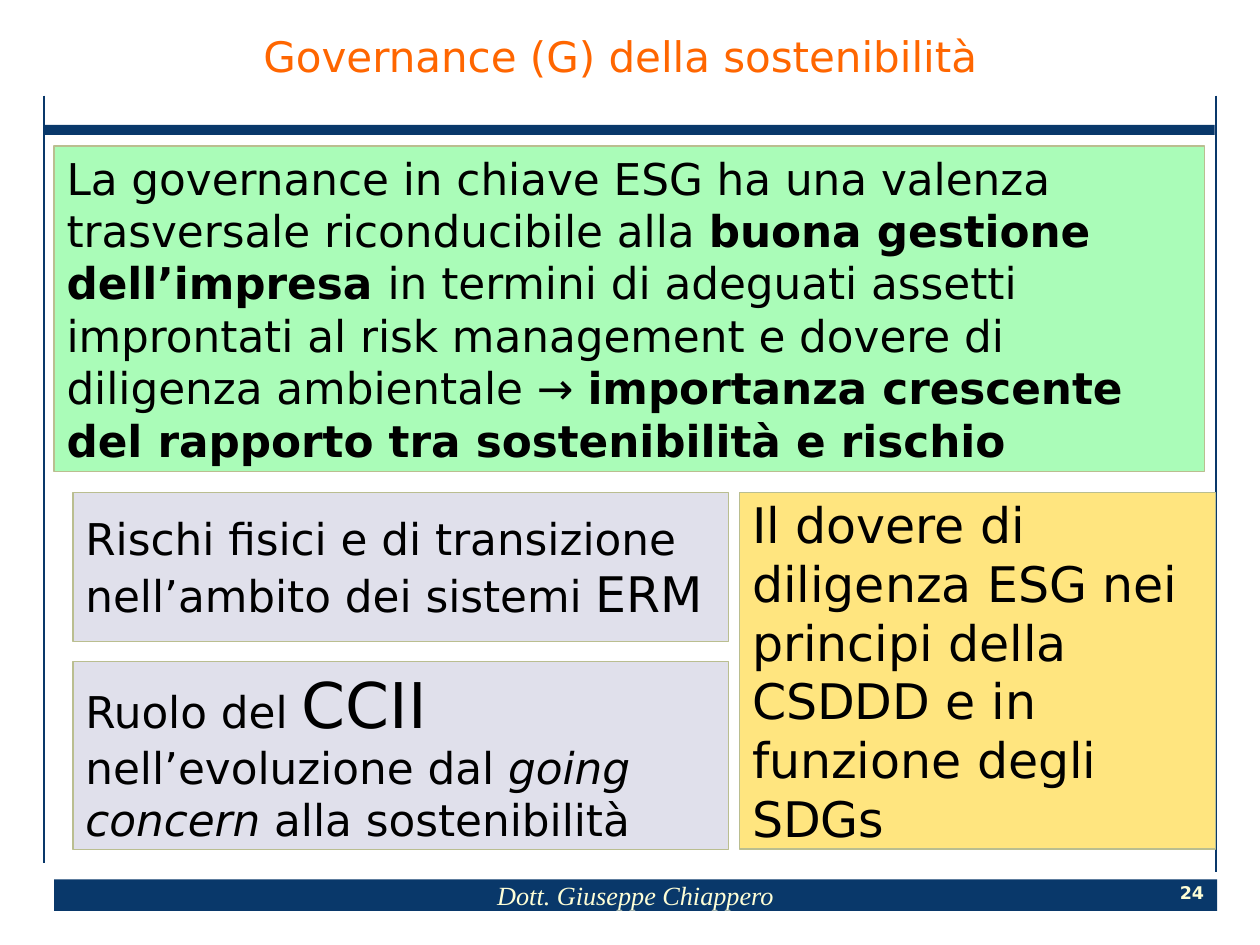
from dataclasses import dataclass

from lxml.etree import SubElement
from pptx import Presentation
from pptx.dml.color import RGBColor
from pptx.enum.shapes import MSO_CONNECTOR, MSO_SHAPE
from pptx.enum.text import MSO_ANCHOR, PP_ALIGN
from pptx.oxml.ns import qn
from pptx.util import Inches, Pt

COLORS = {
    "navy": "09386A", "cream": "FEFED6", "orange": "FF6600", "black": "000000",
    "green": "AAFCB8", "yellow": "FFE57F", "lilac": "E0E0EB", "edge": "BABE90",
}
BODY_FONT = "DejaVu Sans"
FOOTER_FONT = "Times New Roman"


@dataclass
class Span:
    text: str
    size: float = 25
    bold: bool = False
    italic: bool = False


@dataclass
class Panel:
    left: float
    top: float
    width: float
    height: float
    fill: str
    spans: list[Span]


LEFT_COLUMN = {"left": 0.58, "width": 5.2, "fill": "lilac"}
PANELS = [
    Panel(0.43, 1.16, 9.13, 2.58, "green", [
        Span("La governance in chiave ESG ha una valenza trasversale riconducibile alla "),
        Span("buona gestione dell’impresa ", bold=True),
        Span("in termini di adeguati assetti improntati al risk management "
             "e dovere di diligenza ambientale → "),
        Span("importanza crescente del rapporto tra sostenibilità e rischio", bold=True),
    ]),
    Panel(5.87, 3.91, 3.78, 2.83, "yellow", [
        Span("Il dovere di diligenza ESG nei principi della CSDDD "
             "e in funzione degli SDGs", 28),
    ]),
    Panel(top=3.91, height=1.18, **LEFT_COLUMN, spans=[
        Span("Rischi fisici e di transizione nell’ambito dei sistemi "),
        Span("ERM", 28),
    ]),
    Panel(top=5.25, height=1.49, **LEFT_COLUMN, spans=[
        Span("Ruolo del "),
        Span("CCII ", 36),
        Span("nell’evoluzione dal "),
        Span("going concern", italic=True),
        Span(" alla sostenibilità"),
    ]),
]


def color(name: str) -> RGBColor:
    return RGBColor.from_string(COLORS[name])


def write(shape, spans: list[Span], *, ink: str = "black", font: str = BODY_FONT,
          align=PP_ALIGN.LEFT, wrap: bool = True, margin: float = 0.1,
          line_spacing: float = 1.0) -> None:
    """Fill a shape with one vertically centred paragraph."""
    frame = shape.text_frame
    frame.word_wrap = wrap
    frame.vertical_anchor = MSO_ANCHOR.MIDDLE
    frame.margin_left = frame.margin_right = Inches(margin)
    frame.margin_top = frame.margin_bottom = Inches(margin / 2)
    para = frame.paragraphs[0]
    para.alignment = align
    para.line_spacing = line_spacing
    para.space_before = Pt(0)
    for span in spans:
        run = para.add_run()
        run.text = span.text
        run.font.name = font
        run.font.size = Pt(span.size)
        run.font.bold = span.bold
        run.font.italic = span.italic
        run.font.color.rgb = color(ink)


def add_box(page, left: float, top: float, width: float, height: float,
            fill: str, edge: str | None = None):
    box = page.shapes.add_shape(MSO_SHAPE.RECTANGLE, Inches(left), Inches(top),
                                Inches(width), Inches(height))
    box.shadow.inherit = False
    box.fill.solid()
    box.fill.fore_color.rgb = color(fill)
    if edge:
        box.line.color.rgb = color(edge)
        box.line.width = Pt(0.75)
    else:
        box.line.fill.background()
    return box


def add_side_line(page, x: float, top: float, bottom: float) -> None:
    line = page.shapes.add_connector(MSO_CONNECTOR.STRAIGHT, Inches(x), Inches(top),
                                     Inches(x), Inches(bottom))
    line.line.color.rgb = color("navy")
    line.line.width = Pt(1)
    SubElement(line._element.spPr, qn("a:effectLst"))


def main() -> None:
    deck = Presentation()
    deck.slide_width, deck.slide_height = Inches(10), Inches(7.5)
    page = deck.slides.add_slide(deck.slide_layouts[5])

    # Frame: top bar, footer bar and side lines
    add_box(page, 0.35, 0.99, 9.29, 0.08, "navy")
    footer = add_box(page, 0.43, 6.98, 9.23, 0.25, "navy")
    write(footer, [Span("Dott. Giuseppe Chiappero", 15, italic=True)], ink="cream",
          font=FOOTER_FONT, align=PP_ALIGN.CENTER)
    add_side_line(page, 0.35, 0.76, 6.85)
    add_side_line(page, 9.65, 0.76, 6.92)

    # Page number
    number = page.shapes.add_textbox(Inches(9.33), Inches(6.98), Inches(0.26), Inches(0.2))
    write(number, [Span("24", 10, bold=True)], ink="cream", align=PP_ALIGN.CENTER,
          wrap=False, margin=0)

    # Title
    title = page.shapes.title
    title.left, title.top = Inches(0.2), Inches(0.23)
    title.width, title.height = Inches(9.45), Inches(0.5)
    write(title, [Span("Governance (G) della sostenibilità", 24)], ink="orange",
          align=PP_ALIGN.CENTER, wrap=False, line_spacing=0.8)

    # Text panels
    for panel in PANELS:
        box = add_box(page, panel.left, panel.top, panel.width, panel.height,
                      panel.fill, edge="edge")
        write(box, panel.spans)

    deck.save("out.pptx")


if __name__ == "__main__":
    main()
